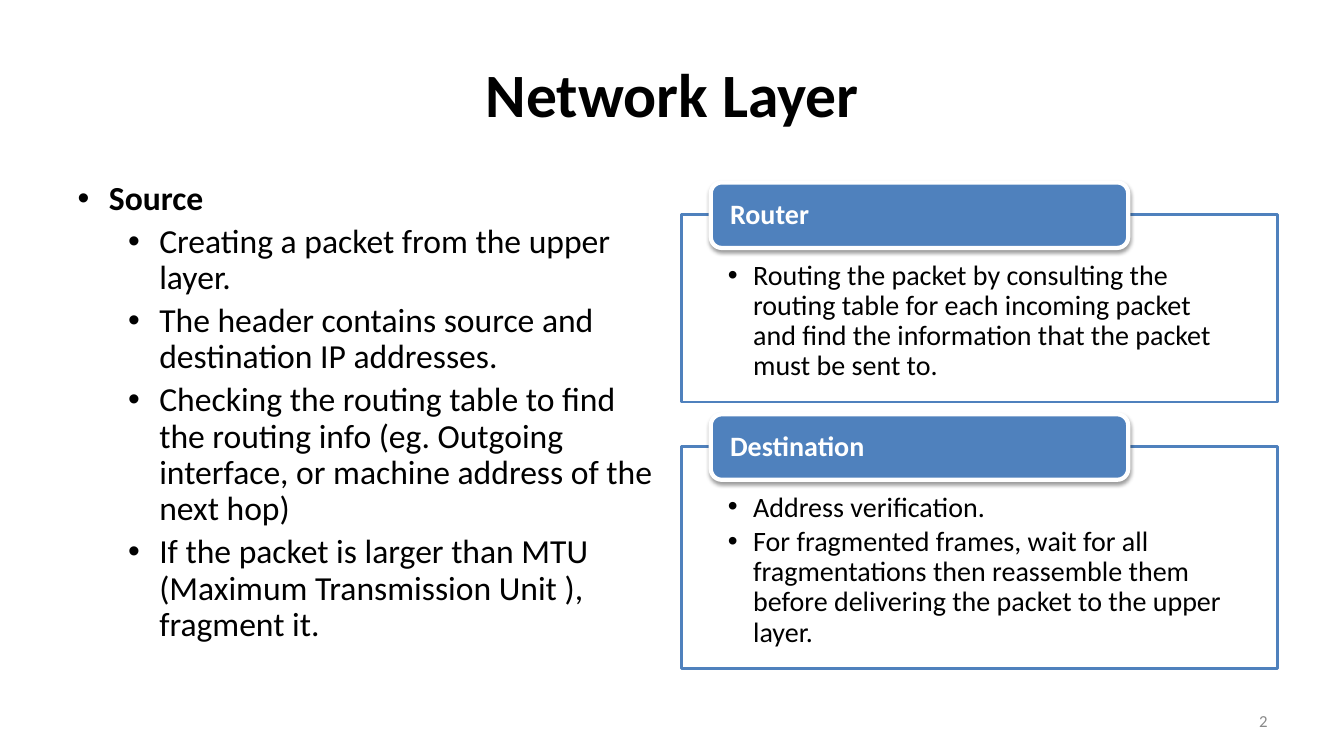
from dataclasses import dataclass

from lxml.etree import SubElement
from pptx import Presentation
from pptx.dml.color import RGBColor
from pptx.enum.shapes import MSO_SHAPE
from pptx.enum.text import MSO_ANCHOR, MSO_AUTO_SIZE, PP_ALIGN
from pptx.oxml.ns import qn
from pptx.util import Inches, Pt


@dataclass(frozen=True)
class Theme:
    font: str = "Calibri"
    black: RGBColor = RGBColor(0x00, 0x00, 0x00)
    white: RGBColor = RGBColor(0xFF, 0xFF, 0xFF)
    blue: RGBColor = RGBColor(0x4F, 0x81, 0xBD)
    gray: RGBColor = RGBColor(0x89, 0x89, 0x89)
    title_size: int = 44
    list_size: int = 24
    card_size: int = 20
    number_size: int = 12


THEME = Theme()


def add_span(para, text, size, color, bold=False):
    span = para.add_run()
    span.text = text
    span.font.name = THEME.font
    span.font.size = Pt(size)
    span.font.bold = bold
    span.font.color.rgb = color


def set_bullet(para, left, hanging):
    """Give the paragraph a round bullet hanging to the left of its text."""
    properties = para._p.get_or_add_pPr()
    properties.set("marL", str(Inches(left)))
    properties.set("indent", str(-Inches(hanging)))
    SubElement(properties, qn("a:buFont"), typeface="Arial")
    SubElement(properties, qn("a:buChar"), char="•")
    para.line_spacing = 0.9


deck = Presentation()
deck.slide_width = Inches(13.33)
deck.slide_height = Inches(7.5)
page = deck.slides.add_slide(deck.slide_layouts[1])

# Title
title = page.shapes.title
title.left, title.top = Inches(0.67), Inches(0.3)
title.width, title.height = Inches(12), Inches(1.25)
title.text_frame.vertical_anchor = MSO_ANCHOR.MIDDLE
para = title.text_frame.paragraphs[0]
para.alignment = PP_ALIGN.CENTER
add_span(para, "Network Layer", THEME.title_size, THEME.black, bold=True)

# Source list
source_items = [
    (0, "Source"),
    (1, "Creating a packet from the upper layer."),
    (1, "The header contains source and destination IP addresses."),
    (1, "Checking the routing table to find the routing info (eg. Outgoing "
        "interface, or machine address of the next hop)"),
    (1, "If the packet is larger than MTU (Maximum Transmission Unit ), fragment it."),
]
body = page.placeholders[1]
body.left, body.top = Inches(0.67), Inches(1.75)
body.width, body.height = Inches(5.91), Inches(4.95)
frame = body.text_frame
frame.auto_size = MSO_AUTO_SIZE.NONE
for index, (level, text) in enumerate(source_items):
    para = frame.add_paragraph() if index else frame.paragraphs[0]
    para.level = level
    set_bullet(para, 0.31 + 0.5 * level, 0.31)
    para.space_before = Pt(4.8 if index else 0)
    add_span(para, text, THEME.list_size, THEME.black, bold=level == 0)

# Router and destination cards: a framed list under an overlapping heading tab
cards = [
    ("Router", 2.13, 1.86, [
        "Routing the packet by consulting the routing table for each incoming packet "
        "and find the information that the packet must be sent to.",
    ]),
    ("Destination", 4.43, 2.2, [
        "Address verification.",
        "For fragmented frames, wait for all fragmentations then reassemble them "
        "before delivering the packet to the upper layer.",
    ]),
]
for heading, top, height, items in cards:
    card = page.shapes.add_shape(
        MSO_SHAPE.RECTANGLE, Inches(6.76), Inches(top), Inches(5.91), Inches(height))
    card.shadow.inherit = False
    card.fill.solid()
    card.fill.fore_color.rgb = THEME.white
    card.line.color.rgb = THEME.blue
    card.line.width = Pt(2)
    frame = card.text_frame
    frame.word_wrap = True
    frame.vertical_anchor = MSO_ANCHOR.TOP
    frame.margin_left = frame.margin_top = frame.margin_right = Inches(0.46)
    frame.margin_bottom = Inches(0.16)
    for index, text in enumerate(items):
        para = frame.add_paragraph() if index else frame.paragraphs[0]
        para.level = 1
        para.alignment = PP_ALIGN.LEFT
        set_bullet(para, 0.25, 0.25)
        para.space_after = Pt(3)
        add_span(para, text, THEME.card_size, THEME.black)

    tab = page.shapes.add_shape(
        MSO_SHAPE.ROUNDED_RECTANGLE, Inches(7.05), Inches(top - 0.32), Inches(4.14), Inches(0.65))
    tab.shadow.inherit = False
    tab.fill.solid()
    tab.fill.fore_color.rgb = THEME.blue
    tab.line.color.rgb = THEME.white
    tab.line.width = Pt(3)
    effects = tab._element.spPr.find(qn("a:effectLst"))
    shadow = SubElement(effects, qn("a:outerShdw"), blurRad=str(Pt(3.1)),
                        dist=str(Pt(1.6)), dir="5400000", rotWithShape="0")
    shade = SubElement(shadow, qn("a:srgbClr"), val=str(THEME.black))
    SubElement(shade, qn("a:alpha"), val="38000")
    frame = tab.text_frame
    frame.word_wrap = True
    frame.vertical_anchor = MSO_ANCHOR.MIDDLE
    frame.margin_left = frame.margin_right = Inches(0.16)
    frame.margin_top = frame.margin_bottom = 0
    para = frame.paragraphs[0]
    para.alignment = PP_ALIGN.LEFT
    para.line_spacing = 0.9
    add_span(para, heading, THEME.card_size, THEME.white, bold=True)

# Page number
number = page.shapes.add_textbox(Inches(9.56), Inches(6.95), Inches(3.11), Inches(0.4))
number.text_frame.word_wrap = True
number.text_frame.vertical_anchor = MSO_ANCHOR.MIDDLE
para = number.text_frame.paragraphs[0]
para.alignment = PP_ALIGN.RIGHT
para.space_after = Pt(6)
add_span(para, "2", THEME.number_size, THEME.gray)

deck.save("out.pptx")
